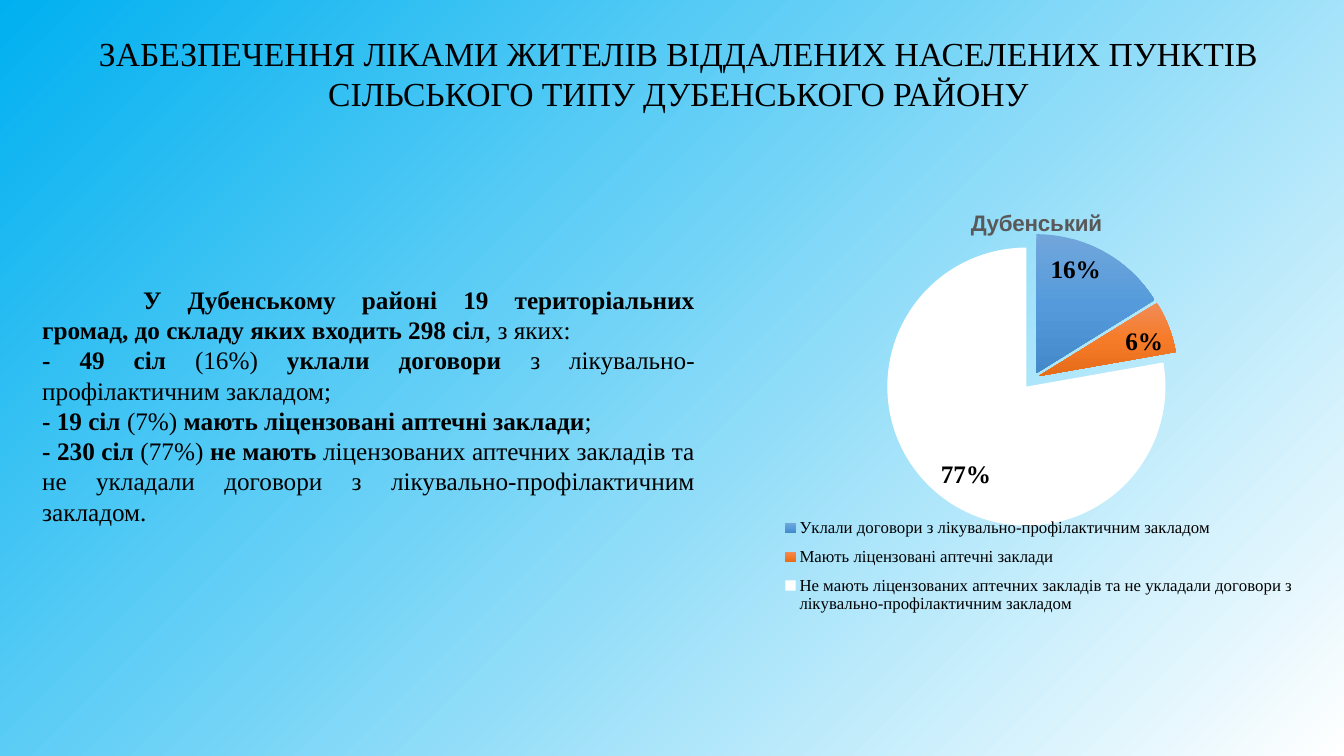
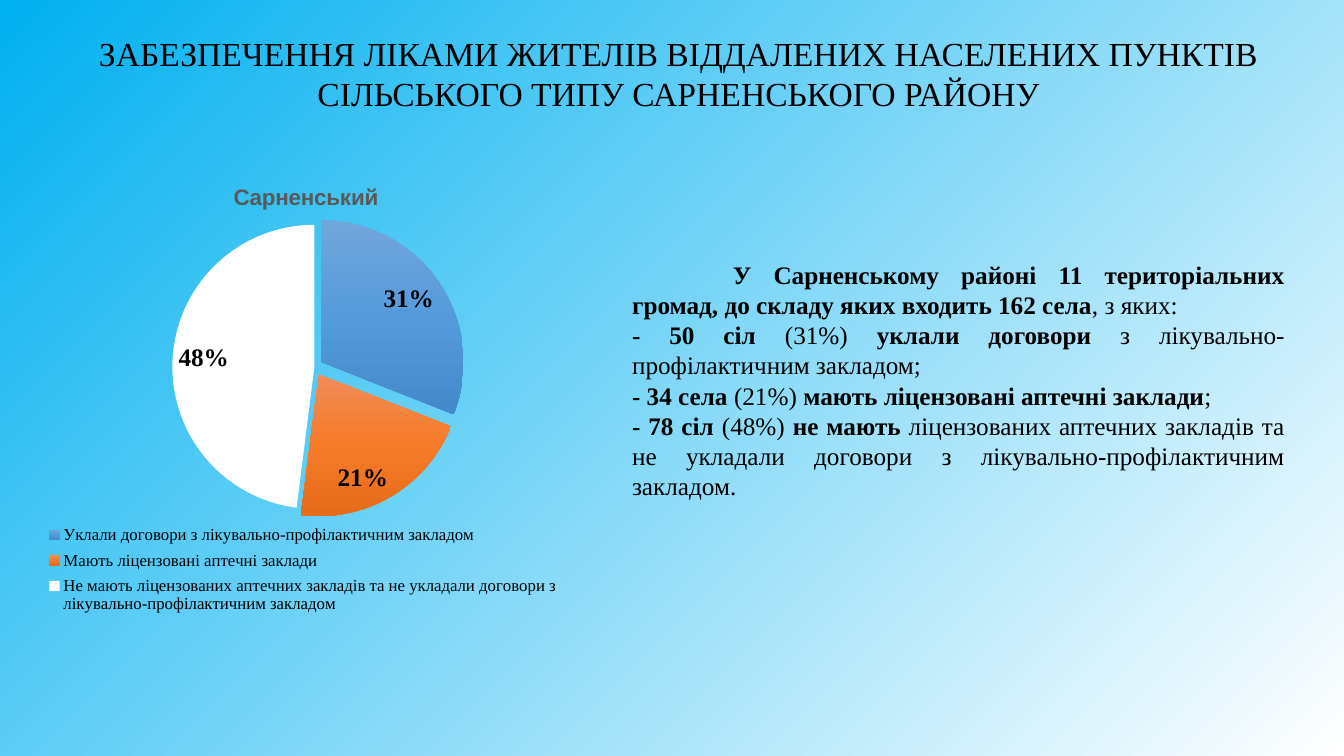
from copy import deepcopy
from dataclasses import dataclass

from lxml import etree
from pptx import Presentation
from pptx.chart.data import CategoryChartData
from pptx.dml.color import RGBColor
from pptx.enum.chart import XL_CHART_TYPE, XL_LABEL_POSITION, XL_LEGEND_POSITION
from pptx.enum.text import MSO_ANCHOR, MSO_AUTO_SIZE, PP_ALIGN
from pptx.oxml.ns import qn
from pptx.util import Inches, Pt

SLIDE_W, SLIDE_H = Inches(13.33), Inches(7.5)
TITLE_ONLY = 5


@dataclass(frozen=True)
class Theme:
    serif: str = "Times New Roman"
    sans: str = "Arial"
    ink: str = "000000"
    chart_title_ink: str = "595959"
    backdrop: tuple = ("00B0F0", "FFFFFF")
    slices: tuple = (
        ("71A6DB", "559BDB", "448ACA"),
        ("F18C57", "F67B28", "E56C19"),
        ("FFFFFF",),
    )
    title_size: int = 24
    body_size: int = 18
    chart_title_size: int = 16
    legend_size: int = 12
    chart_size: int = 10


@dataclass(frozen=True)
class District:
    """Facts and placement; boxes are percentages of the slide."""
    name: str
    name_genitive: str
    name_locative: str
    communities: int
    villages: str
    counts: tuple       # villages per group, with the noun
    text_shares: tuple  # percentages quoted in the text
    pie_shares: tuple
    explosions: tuple
    text_box: tuple
    chart_box: tuple
    plot_layout: tuple  # x, y, w, h as shares of the chart
    legend_layout: tuple


THEME = Theme()
TITLE_BOX = (2.4, 3.2, 96.15, 12.93)
GROUPS = (
    "Уклали договори з лікувально-профілактичним закладом",
    "Мають ліцензовані аптечні заклади",
    "Не мають ліцензованих аптечних закладів та не укладали договори "
    "з лікувально-профілактичним закладом",
)
# Bold and regular wording for each group of villages
STATEMENTS = (
    ("уклали договори ", "з лікувально-профілактичним закладом;"),
    ("мають ліцензовані аптечні заклади", ";"),
    ("не мають ", "ліцензованих аптечних закладів та не укладали договори "
                  "з лікувально-профілактичним закладом."),
)
DISTRICTS = (
    District(
        "Дубенський", "ДУБЕНСЬКОГО", "Дубенському", 19, "298 сіл",
        ("49 сіл", "19 сіл", "230 сіл"), (16, 7, 77), (16, 6, 77), (4, 4, 8),
        text_box=(2.4, 36.93, 50.03, 33.6),
        chart_box=(56.26, 25.2, 41.71, 58.4),
        plot_layout=(0.01, 0.11, 0.97, 0.63),
        legend_layout=(0.04, 0.72, 0.93, 0.26),
    ),
    District(
        "Сарненський", "САРНЕНСЬКОГО", "Сарненському", 11, "162 села",
        ("50 сіл", "34 села", "78 сіл"), (31, 21, 48), (31, 21, 48), (6, 6, 0),
        text_box=(46.29, 33.6, 50.03, 33.6),
        chart_box=(1.8, 21.73, 41.94, 61.6),
        plot_layout=(0.03, 0.13, 0.97, 0.61),
        legend_layout=(0.03, 0.76, 0.93, 0.22),
    ),
)


def place(box):
    """Turn percentages of the slide into left, top, width, height."""
    sides = (SLIDE_W, SLIDE_H, SLIDE_W, SLIDE_H)
    return [round(side * share / 100) for side, share in zip(sides, box)]


def style(font, size, family=THEME.serif, color=THEME.ink, bold=None):
    font.size, font.name, font.bold = Pt(size), family, bold
    font.color.rgb = RGBColor.from_string(color)


def paint(fill, colors, clockwise_angle):
    """Fill with one colour, or with evenly spaced gradient stops."""
    if len(colors) == 1:
        fill.solid()
        fill.fore_color.rgb = RGBColor.from_string(colors[0])
        return
    fill.gradient()
    fill.gradient_angle = 360 - clockwise_angle
    for _ in colors[2:]:
        last_stop = fill.gradient_stops[-1]._gs
        last_stop.addnext(deepcopy(last_stop))
    for i, (stop, color) in enumerate(zip(fill.gradient_stops, colors)):
        stop.position = i / (len(colors) - 1)
        stop.color.rgb = RGBColor.from_string(color)


def set_layout(parent, shares, after=None, inner=False):
    """Give a plot area or legend a fixed place inside its chart."""
    for old in parent.findall(qn("c:layout")):
        parent.remove(old)
    layout = etree.Element(qn("c:layout"))
    manual = etree.SubElement(layout, qn("c:manualLayout"))
    settings = [("layoutTarget", "inner")] if inner else []
    settings += [("xMode", "edge"), ("yMode", "edge")]
    settings += zip("xywh", map(str, shares))
    for tag, value in settings:
        etree.SubElement(manual, qn(f"c:{tag}"), val=value)
    if after is None:
        parent.insert(0, layout)
    else:
        after.addnext(layout)


def add_title(slide, text):
    title = slide.shapes.title
    title.left, title.top, title.width, title.height = place(TITLE_BOX)
    frame = title.text_frame
    frame.text = text
    frame.word_wrap = True
    frame.auto_size = MSO_AUTO_SIZE.NONE
    frame.vertical_anchor = MSO_ANCHOR.MIDDLE
    heading = frame.paragraphs[0]
    heading.alignment = PP_ALIGN.CENTER
    style(heading.font, THEME.title_size)


def add_summary(slide, district):
    """Justified text whose runs alternate between bold and regular."""
    intro = (f"У {district.name_locative} районі {district.communities} "
             f"територіальних громад, до складу яких входить {district.villages}",
             ", з яких:")
    items = [(f"- {count} ", f"({share}%) ", *statement) for count, share, statement
             in zip(district.counts, district.text_shares, STATEMENTS)]
    frame = slide.shapes.add_textbox(*place(district.text_box)).text_frame
    frame.word_wrap = True
    frame.auto_size = MSO_AUTO_SIZE.SHAPE_TO_FIT_TEXT
    for i, pieces in enumerate([intro, *items]):
        paragraph = frame.add_paragraph() if i else frame.paragraphs[0]
        paragraph.alignment = PP_ALIGN.JUSTIFY
        style(paragraph.font, THEME.body_size)
        for j, piece in enumerate(pieces):
            run = paragraph.add_run()
            run.text = piece
            run.font.bold = j % 2 == 0
    # First-line indent of the introduction
    frame.paragraphs[0]._p.get_or_add_pPr().set("indent", str(Inches(1)))


def add_pie(slide, district):
    shares = CategoryChartData()
    shares.categories = GROUPS
    shares.add_series(district.name, district.pie_shares)
    chart = slide.shapes.add_chart(
        XL_CHART_TYPE.PIE, *place(district.chart_box), shares).chart
    style(chart.font, THEME.chart_size, THEME.sans)

    # Chart title
    chart.has_title = True
    caption = chart.chart_title.text_frame
    caption.text = district.name
    style(caption.paragraphs[0].font, THEME.chart_title_size, THEME.sans,
          THEME.chart_title_ink, bold=True)

    # Legend
    chart.has_legend = True
    legend = chart.legend
    legend.position = XL_LEGEND_POSITION.BOTTOM
    legend.include_in_layout = False
    style(legend.font, THEME.legend_size)
    legend_xml = legend._element
    set_layout(legend_xml, district.legend_layout,
               after=legend_xml.find(qn("c:legendPos")))

    # Slices
    plot = chart.plots[0]
    plot.vary_by_categories = True
    series = plot.series[0]
    for i, colors in enumerate(THEME.slices):
        paint(series.points[i].format.fill, colors, 90)
    for point, distance in zip(series._element.findall(qn("c:dPt")),
                               district.explosions):
        explosion = etree.Element(qn("c:explosion"), val=str(distance))
        point.find(qn("c:spPr")).addprevious(explosion)
    set_layout(chart._chartSpace.chart.plotArea, district.plot_layout, inner=True)

    # Labels show the stated shares, whose rounded sum may differ from 100
    plot.has_data_labels = True
    labels = plot.data_labels
    labels.show_percentage = False
    labels.show_value = True
    labels.number_format = '0"%"'
    labels.number_format_is_linked = False
    labels.position = XL_LABEL_POSITION.INSIDE_END
    style(labels.font, THEME.body_size, bold=True)


def main():
    deck = Presentation()
    deck.slide_width, deck.slide_height = SLIDE_W, SLIDE_H
    paint(deck.slide_master.background.fill, THEME.backdrop, 45)
    for district in DISTRICTS:
        slide = deck.slides.add_slide(deck.slide_layouts[TITLE_ONLY])
        add_title(slide, "ЗАБЕЗПЕЧЕННЯ ЛІКАМИ ЖИТЕЛІВ ВІДДАЛЕНИХ НАСЕЛЕНИХ "
                         f"ПУНКТІВ СІЛЬСЬКОГО ТИПУ {district.name_genitive} РАЙОНУ")
        add_summary(slide, district)
        add_pie(slide, district)
    deck.save("out.pptx")


if __name__ == "__main__":
    main()
